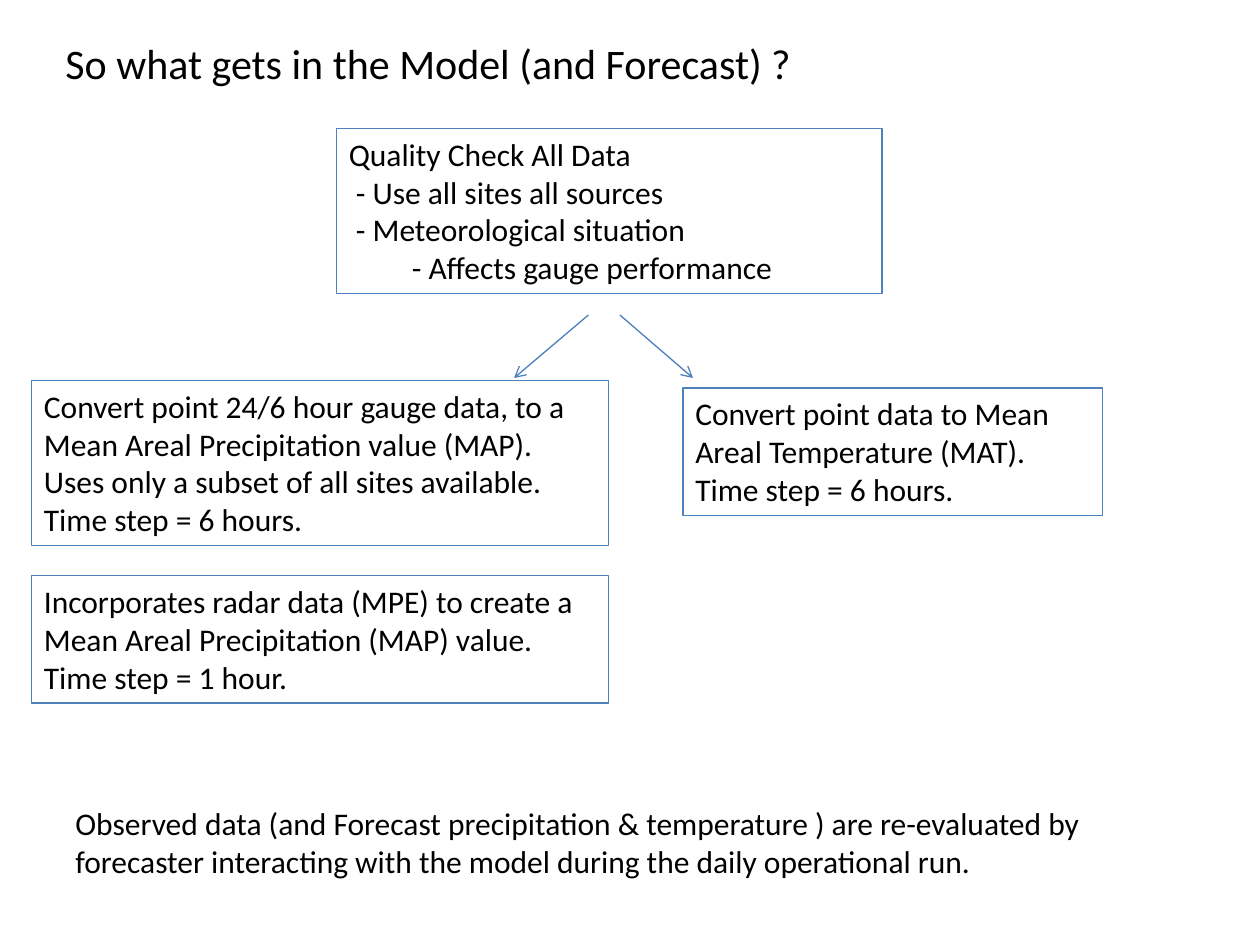
"""Build the slide on what gets into the model and forecast."""
from dataclasses import dataclass

import pptx
import pptx.dml.color
import pptx.enum.shapes
import pptx.enum.text
import pptx.oxml
import pptx.oxml.ns
import pptx.util
from pptx.util import Inches


@dataclass(frozen=True)
class Theme:
    font: str = "Calibri"
    text: str = "000000"
    border: str = "4F81BD"
    arrow: str = "4B7EBC"
    title_size: int = 24
    body_size: int = 18
    line_width: float = 0.75


@dataclass(frozen=True)
class Block:
    left: float
    top: float
    width: float
    height: float
    lines: tuple[str, ...]
    size: int
    framed: bool = True


@dataclass(frozen=True)
class Arrow:
    x1: float
    y1: float
    x2: float
    y2: float


THEME = Theme()
BODY = THEME.body_size
MAP_LEFT, MAP_WIDTH = 0.25, 4.58
ARROW_TOP, ARROW_BOTTOM = 2.5, 3

BLOCKS = (
    Block(2.67, 1.02, 4.33, 1.31, (
        "Quality Check All Data",
        " - Use all sites all sources",
        " - Meteorological situation",
        "\t- Affects gauge performance",
    ), BODY),
    Block(MAP_LEFT, 3.02, MAP_WIDTH, 1.31, (
        "Convert point 24/6 hour gauge data, to a Mean Areal Precipitation value (MAP). "
        "Uses only a subset of all sites available. Time step = 6 hours.",
    ), BODY),
    Block(0.42, 0.25, 6.42, 0.5, ("So what gets in the Model (and Forecast) ?",),
          THEME.title_size, framed=False),
    Block(0.5, 6.33, 8.58, 0.71, (
        "Observed data (and Forecast precipitation & temperature ) are re-evaluated by "
        "forecaster interacting with the model during the daily operational run.",
    ), BODY, framed=False),
    Block(MAP_LEFT, 4.57, MAP_WIDTH, 1.01, (
        "Incorporates radar data (MPE) to create a Mean Areal Precipitation (MAP) value. "
        "Time step = 1 hour.",
    ), BODY),
    Block(5.42, 3.08, 3.33, 1.01, (
        "Convert point data to Mean Areal Temperature (MAT). Time step = 6 hours.",
    ), BODY),
)

ARROWS = (
    Arrow(4.67, ARROW_TOP, 4.08, ARROW_BOTTOM),
    Arrow(4.92, ARROW_TOP, 5.5, ARROW_BOTTOM),
)


def rgb(value: str) -> pptx.dml.color.RGBColor:
    return pptx.dml.color.RGBColor.from_string(value)


def style_line(line, color: str) -> None:
    line.color.rgb = rgb(color)
    line.width = pptx.util.Pt(THEME.line_width)


def add_block(slide, block: Block) -> None:
    box = [Inches(v) for v in (block.left, block.top, block.width, block.height)]
    if block.framed:
        sp = slide.shapes.add_shape(pptx.enum.shapes.MSO_SHAPE.RECTANGLE, *box)
        sp.shadow.inherit = False
        sp.fill.background()
        style_line(sp.line, THEME.border)
    else:
        sp = slide.shapes.add_textbox(*box)
    tf = sp.text_frame
    tf.word_wrap = True
    tf.auto_size = pptx.enum.text.MSO_AUTO_SIZE.SHAPE_TO_FIT_TEXT
    tf.vertical_anchor = pptx.enum.text.MSO_ANCHOR.TOP
    tf.margin_right = Inches(0.12)
    tf.text = "\n".join(block.lines)
    for p in tf.paragraphs:
        p.alignment = pptx.enum.text.PP_ALIGN.LEFT
        p.font.name = THEME.font
        p.font.size = pptx.util.Pt(block.size)
        p.font.color.rgb = rgb(THEME.text)


def add_arrow(slide, arrow: Arrow) -> None:
    ends = [Inches(v) for v in (arrow.x1, arrow.y1, arrow.x2, arrow.y2)]
    sp = slide.shapes.add_connector(pptx.enum.shapes.MSO_CONNECTOR.STRAIGHT, *ends)
    style_line(sp.line, THEME.arrow)
    ns = pptx.oxml.ns.nsdecls("a")
    sp.line._get_or_add_ln().append(
        pptx.oxml.parse_xml(f'<a:tailEnd {ns} type="arrow"/>'))
    sp._element.spPr.append(pptx.oxml.parse_xml(f"<a:effectLst {ns}/>"))


def main() -> None:
    prs = pptx.Presentation()
    prs.slide_width, prs.slide_height = Inches(10), Inches(7.5)
    slide = prs.slides.add_slide(prs.slide_layouts[6])
    for block in BLOCKS:
        add_block(slide, block)
    for arrow in ARROWS:
        add_arrow(slide, arrow)
    prs.save("out.pptx")


if __name__ == "__main__":
    main()
